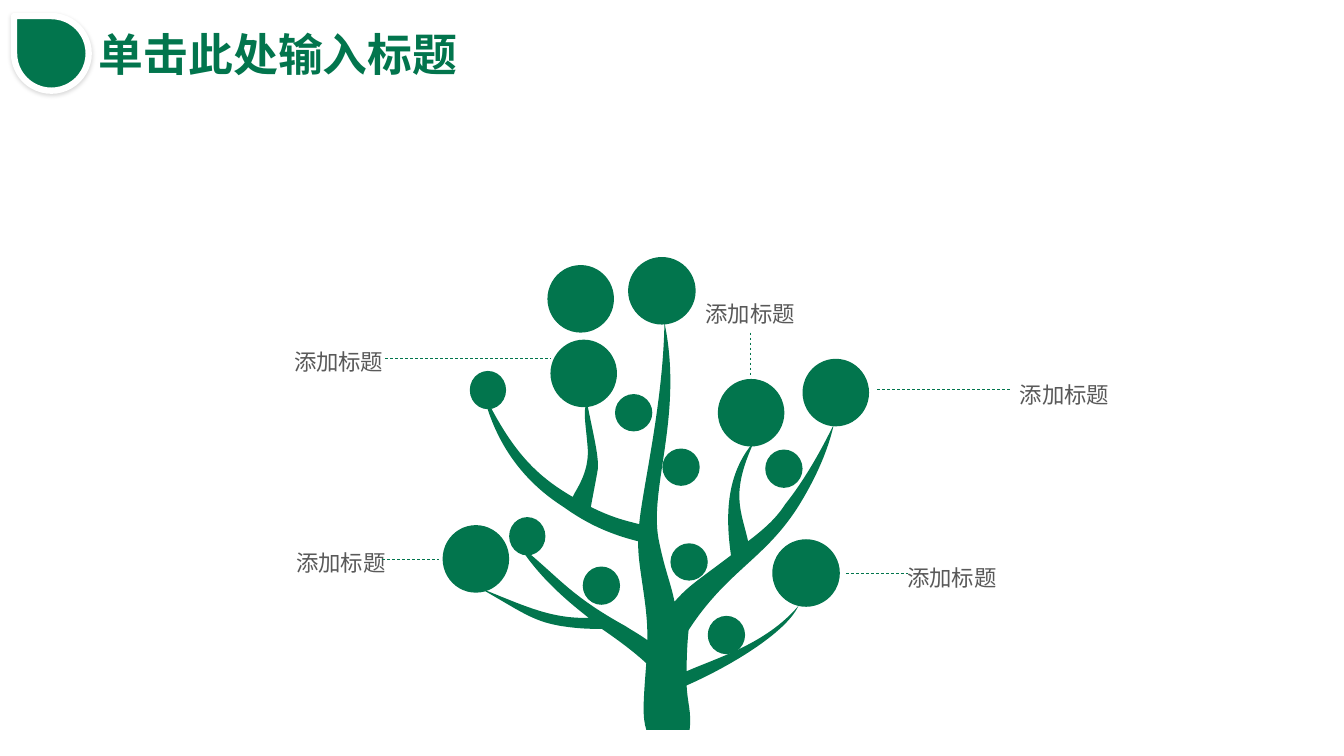
from dataclasses import dataclass
from lxml import etree
from pptx import Presentation
from pptx.dml.color import RGBColor
from pptx.enum.dml import MSO_LINE_DASH_STYLE as DASH
from pptx.enum.shapes import MSO_CONNECTOR, MSO_SHAPE
from pptx.enum.text import MSO_ANCHOR, MSO_AUTO_SIZE, PP_ALIGN
from pptx.oxml import parse_xml
from pptx.oxml.ns import nsdecls, qn
from pptx.util import Pt

PX = 9144


@dataclass(frozen=True)
class Theme:
    green: RGBColor = RGBColor(0x02, 0x75, 0x4D)
    grey: RGBColor = RGBColor(0x59, 0x59, 0x59)
    white: RGBColor = RGBColor(0xFF, 0xFF, 0xFF)
    font: str = "Arial"
    title_size: Pt = Pt(32)
    label_size: Pt = Pt(16)
    leader_width: Pt = Pt(0.5)
    badge_border: Pt = Pt(4.5)


THEME = Theme()

TREE_START = (684, 724)
TREE_CURVES = [
    ((641, 724), (641, 724), (641, 724)),
    ((637, 711), (638, 697), (641, 658)),
    ((628, 646), (613, 635), (597, 624)),
    ((579, 624), (569, 623), (556, 621)),
    ((527, 616), (516, 606), (475, 583)),
    ((520, 601), (546, 614), (584, 613)),
    ((557, 592), (532, 569), (514, 540)),
    ((555, 573), (564, 590), (620, 621)),
    ((626, 625), (632, 628), (642, 635)),
    ((642, 634), (642, 634), (642, 634)),
    ((643, 600), (632, 561), (633, 537)),
    ((600, 529), (577, 516), (559, 503)),
    ((510, 472), (488, 428), (479, 389)),
    ((507, 446), (530, 471), (568, 493)),
    ((571, 486), (584, 470), (583, 446)),
    ((581, 419), (578, 410), (582, 398)),
    ((587, 425), (594, 451), (593, 465)),
    ((591, 477), (590, 481), (586, 503)),
    ((608, 514), (622, 517), (634, 520)),
    ((637, 486), (658, 399), (659, 320)),
    ((678, 411), (644, 483), (653, 534)),
    ((659, 565), (665, 577), (669, 597)),
    ((683, 581), (692, 576), (725, 551)),
    ((719, 509), (721, 469), (748, 438)),
    ((724, 490), (735, 506), (742, 537)),
    ((759, 524), (770, 514), (779, 500)),
    ((791, 485), (808, 460), (827, 421)),
    ((821, 448), (809, 473), (798, 492)),
    ((763, 554), (724, 562), (683, 625)),
    ((682, 634), (681, 649), (681, 666)),
    ((710, 653), (760, 639), (792, 601)),
    ((779, 629), (720, 663), (681, 680)),
    ((682, 699), (686, 706), (684, 724)),
]

FRUIT = {
    (67, 67): [(623, 255), (766, 535)],
    (66, 67): [(796, 356), (546, 337), (439, 521), (543, 263), (712, 376)],
    (37, 38): [(702, 611), (759, 446), (578, 562)],
    (36, 38): [(466, 368), (505, 513)],
    (37, 37): [(610, 391), (665, 539), (657, 445)],
}

LABEL_TEXT = "添加标题"
LABELS = [(283, 540), (1001, 373), (889, 555), (281, 340), (689, 293)]
LEADERS = [
    (379, 555, 435, 555),
    (382, 356, 546, 356),
    (744, 330, 744, 374),
    (870, 386, 1002, 386),
    (839, 569, 901, 569),
]


def emu(*lengths):
    return [n * PX for n in lengths]


def paint(s):
    s.fill.solid()
    s.fill.fore_color.rgb = THEME.green
    s.line.fill.background()
    s.shadow.inherit = False


def bend(s):
    lines = list(s._element.iter(qn("a:lnTo")))
    for i in range(0, len(lines), 3):
        curve = etree.Element(qn("a:cubicBezTo"))
        lines[i].addprevious(curve)
        for line in lines[i:i + 3]:
            curve.append(line[0])
            line.getparent().remove(line)


def add_tree(shapes):
    builder = shapes.build_freeform(*TREE_START, scale=PX)
    points = [point for curve in TREE_CURVES for point in curve]
    builder.add_line_segments(points, close=True)
    s = builder.convert_to_shape()
    bend(s)
    paint(s)


def add_fruit(shapes, *box):
    paint(shapes.add_shape(MSO_SHAPE.OVAL, *emu(*box)))


def format_text(tf, text, size, color, align, bold=False):
    tf.word_wrap = False
    tf.text = text
    p = tf.paragraphs[0]
    p.alignment = align
    p.font.name = THEME.font
    p.font.size = size
    p.font.bold = bold
    p.font.color.rgb = color


def add_label(shapes, x, y):
    tf = shapes.add_textbox(*emu(x, y, 110, 37)).text_frame
    format_text(tf, LABEL_TEXT, THEME.label_size, THEME.grey, PP_ALIGN.CENTER)
    tf.auto_size = MSO_AUTO_SIZE.SHAPE_TO_FIT_TEXT


def add_leader(shapes, *ends):
    s = shapes.add_connector(MSO_CONNECTOR.STRAIGHT, *emu(*ends))
    s.line.color.rgb = THEME.green
    s.line.width = THEME.leader_width
    s.line.dash_style = DASH.DASH
    etree.SubElement(s._element.spPr, qn("a:effectLst"))


def set_title(s, text):
    s.left, s.top, s.width, s.height = emu(88, 21, 379, 64)
    tf = s.text_frame
    format_text(tf, text, THEME.title_size, THEME.green, PP_ALIGN.LEFT, True)
    tf.auto_size = MSO_AUTO_SIZE.NONE
    tf.vertical_anchor = MSO_ANCHOR.MIDDLE


def add_badge(shapes):
    s = shapes.add_shape(MSO_SHAPE.TEAR, *emu(14, 16, 74, 74))
    paint(s)
    s.line.color.rgb = THEME.white
    s.line.width = THEME.badge_border
    spPr = s._element.spPr
    spPr.find(qn("a:xfrm")).set("flipH", "1")
    spPr.find(qn("a:effectLst")).append(parse_xml(
        f'<a:outerShdw {nsdecls("a")} blurRad="{Pt(3)}" dist="{Pt(1)}" '
        'dir="5400000" algn="t" rotWithShape="0"><a:srgbClr val="000000">'
        '<a:alpha val="15000"/></a:srgbClr></a:outerShdw>'))


def main():
    prs = Presentation()
    prs.slide_width, prs.slide_height = emu(1333, 750)
    slide = prs.slides.add_slide(prs.slide_layouts[5])
    shapes = slide.shapes
    add_tree(shapes)
    for size, places in FRUIT.items():
        for place in places:
            add_fruit(shapes, *place, *size)
    for x, y in LABELS:
        add_label(shapes, x, y)
    for ends in LEADERS:
        add_leader(shapes, *ends)
    set_title(shapes.title, "单击此处输入标题")
    add_badge(shapes)
    prs.save("out.pptx")


if __name__ == "__main__":
    main()
